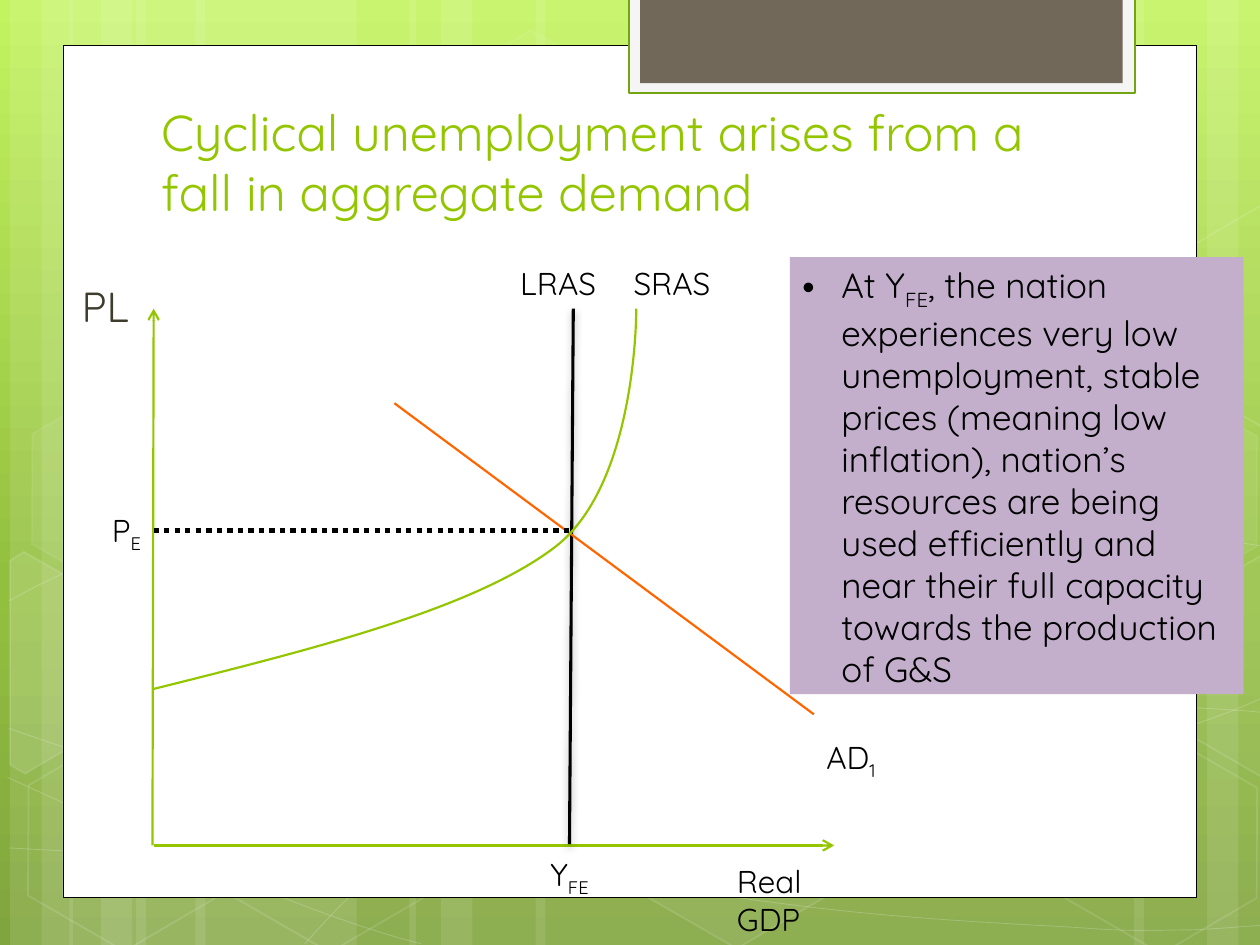
import copy
import pptx
import pptx.dml.color
import pptx.enum.dml
import pptx.enum.shapes
import pptx.enum.text
import pptx.oxml
import pptx.oxml.ns
import pptx.util
from lxml import etree

Inches = pptx.util.Inches
Pt = pptx.util.Pt
qn = pptx.oxml.ns.qn
RGB = pptx.dml.color.RGBColor.from_string
KIND = pptx.enum.shapes.MSO_SHAPE
FIT = pptx.enum.text.MSO_AUTO_SIZE
ANCHOR = pptx.enum.text.MSO_ANCHOR
WHITE, BLACK, GREEN = "FFFFFF", "000000", "94C600"

deck = pptx.Presentation()
deck.slide_width, deck.slide_height = Inches(10), Inches(7.5)
slide = deck.slides.add_slide(deck.slide_layouts[6])
shapes = slide.shapes


def paint(shape, fill=None, line=None, width=1, fade=100, glow=100):
    shape.shadow.inherit = False
    for part, tone, alpha, tag in ((shape.fill, fill, fade, "a:solidFill"),
                                   (shape.line.fill, line, glow, "a:ln")):
        if tone is None:
            part.background()
            continue
        part.solid()
        part.fore_color.rgb = RGB(tone)
        if alpha < 100:
            node = next(shape.element.spPr.find(qn(tag)).iter(qn("a:srgbClr")))
            etree.SubElement(node, qn("a:alpha")).set("val", str(alpha * 1000))
    if line:
        shape.line.width = Pt(width)


def trace(points, curved):
    track = [(Inches(x), Inches(y)) for x, y in points]
    pen = shapes.build_freeform(*track[0])
    pen.add_line_segments(track[1:], close=not curved)
    shape = pen.convert_to_shape()
    if curved:
        route = next(shape.element.iter(qn("a:path")))
        steps = route.findall(qn("a:lnTo"))
        for i in range(0, len(steps), 3):
            bend = etree.SubElement(route, qn("a:cubicBezTo"))
            for step in steps[i:i + 3]:
                bend.append(step[0])
                route.remove(step)
    return shape


back = slide.background.fill
back.gradient()
back.gradient_angle = 270
stops = slide.element.find(".//" + qn("a:gsLst"))
stops.append(copy.deepcopy(stops[0]))
for stop, (place, tone) in zip(back.gradient_stops, ((0, "C3F35F"), (0.62, "93BF3F"), (1, "81A53E"))):
    stop.position = place
    stop.color.rgb = RGB(tone)

for left, width in ((1.08, 1.75), (0.08, 0.5), (0.33, 0.83), (1.55, 1.75), (0.55, 0.5), (0.8, 0.83),
                    (7.33, 1.75), (9.58, 0.5), (9, 0.83), (4.25, 3.08), (3.25, 0.5), (3.5, 0.83)):
    band = shapes.add_shape(KIND.RECTANGLE, Inches(left), 0, Inches(width), Inches(7.5))
    paint(band, WHITE, fade=10)

waves = [
    [(0.07, 6.73), (0.61, 6.76), (1.15, 6.79), (1.9, 6.78), (2.65, 6.77), (3.58, 6.75), (4.58, 6.65),
     (5.58, 6.55), (7, 6.36), (7.92, 6.17), (8.83, 5.98), (9.77, 5.68), (10.07, 5.51)],
    [(0.07, 4.77), (0.36, 4.61), (0.65, 4.46), (1.21, 4.31), (1.78, 4.16), (2.59, 3.94), (3.47, 3.87),
     (4.36, 3.8), (5.44, 3.79), (6.54, 3.87), (7.64, 3.95), (9.47, 4.26), (10.07, 4.34)],
    [(0.06, 6.17), (1.27, 6.72), (2.47, 7.27), (3.34, 7.49)],
    [(0.07, 5.78), (0.38, 5.89), (0.7, 6), (1.28, 6.16), (1.86, 6.31), (2.73, 6.56), (3.57, 6.73),
     (4.4, 6.9), (5.45, 7.08), (6.28, 7.18), (7.11, 7.29), (8, 7.33), (8.53, 7.36),
     (9.05, 7.4), (9.19, 7.38), (9.45, 7.38), (9.71, 7.37), (9.89, 7.35), (10.07, 7.34)],
    [(2.42, 7.49), (2.6, 7.29), (2.78, 7.09), (3.02, 6.91), (3.26, 6.73), (3.6, 6.53), (3.88, 6.39),
     (4.16, 6.25), (4.33, 6.19), (4.7, 6.09), (5.06, 5.99), (5.73, 5.85), (6.08, 5.78),
     (6.44, 5.71), (6.49, 5.71), (6.8, 5.69), (7.11, 5.66), (7.6, 5.63), (7.94, 5.62),
     (8.29, 5.61), (8.86, 5.62), (8.86, 5.62), (8.86, 5.62), (9.53, 5.62), (9.53, 5.62),
     (9.71, 5.63), (9.88, 5.64), (9.97, 5.65), (10.06, 5.66), (10.03, 5.65), (10.06, 5.66)],
]
for wave in waves:
    paint(trace(wave, True), line=WHITE, width=0.5, glow=20)

for left, top, fade, glow in ((3.34, 0.36, 4, 8), (4.97, 5.89, 6, 12), (0.11, 5.91, 0, 12),
                              (0.14, 3.12, 7, 8), (1.74, 5.92, 0, 12), (7.53, 4.53, 10, 12),
                              (8.34, 5.93, 0, 12), (8.34, 3.14, 7, 8)):
    cell = shapes.add_shape(KIND.HEXAGON, Inches(left), Inches(top), Inches(1.75), Inches(1.52))
    cell.adjustments[0], cell.adjustments[1] = 0.285, 1.155
    cell.rotation = 30
    paint(cell, WHITE if fade else None, WHITE, fade=fade, glow=glow)

for points, fade in (
    ([(0.08, 4.45), (0.19, 4.38), (0.96, 4.82), (0.95, 5.7), (0.2, 6.14), (0.08, 6.07)], 10),
    ([(9.26, 4.85), (10.01, 4.41), (10.09, 4.46), (10.09, 6.13), (10.02, 6.17), (9.26, 5.73)], 4),
    ([(9.26, 2.07), (10.01, 1.63), (10.1, 1.68), (10.09, 3.35), (10.02, 3.39), (9.26, 2.95)], 0),
):
    paint(trace(points, False), WHITE if fade else None, WHITE, fade=fade, glow=12)

for box, fill, line, width in (((0.5, 0.36, 9, 6.76), WHITE, BLACK, 0.5),
                               ((4.99, -0.02, 4.02, 0.76), "F5F5F5", "74A510", 1.25),
                               ((5.08, -0.02, 3.83, 0.68), "71685A", None, 0)):
    paint(shapes.add_shape(KIND.RECTANGLE, *map(Inches, box)), fill, line, width)

for ends, tone, width, style in (((1.21, 6.71, 1.22, 2.45), GREEN, 1.25, "arrow"),
                                 ((1.22, 6.71, 6.62, 6.71), GREEN, 1.25, "arrow"),
                                 ((4.52, 6.7, 4.55, 2.45), BLACK, 1.75, "shadow"),
                                 ((3.13, 3.2, 6.46, 5.67), "FF6600", 1.25, ""),
                                 ((1.22, 4.21, 4.55, 4.21), BLACK, 3, "dots")):
    rule = shapes.add_connector(pptx.enum.shapes.MSO_CONNECTOR.STRAIGHT, *map(Inches, ends))
    rule.line.color.rgb = RGB(tone)
    rule.line.width = Pt(width)
    props = rule.element.spPr
    if style == "dots":
        rule.line.dash_style = pptx.enum.dml.MSO_LINE.ROUND_DOT
    if style == "arrow":
        etree.SubElement(props.find(qn("a:ln")), qn("a:tailEnd")).set("type", "arrow")
    effect = etree.SubElement(props, qn("a:effectLst"))
    if style == "shadow":
        shade = etree.SubElement(effect, qn("a:outerShdw"), blurRad=str(Pt(4)), dist=str(Pt(2)),
                                 dir="5400000", rotWithShape="0")
        tint = etree.SubElement(shade, qn("a:srgbClr"), val=BLACK)
        etree.SubElement(tint, qn("a:alpha"), val="28000")

supply = [(1.21, 5.47), (2.49, 5.15), (3.78, 4.83), (4.42, 4.33), (5.06, 3.82), (5.05, 2.45), (5.05, 2.45)]
paint(trace(supply, True), line=GREEN, width=1.25)

note = (", the nation experiences very low unemployment, stable prices (meaning low inflation), "
        "nation’s resources are being used efficiently and near their full capacity "
        "towards the production of G&S")
title = "Cyclical unemployment arises from a fall in aggregate demand"
for role, spot, size, tone, runs in (
    ("title", (1.18, 0.83, 7.68, 0.98), 28.8, GREEN, [title]),
    ("body", (0.55, 2.18, 5.7, 4.53), 24, "3E3D2D", ["PL"]),
    ("wrap", (5.75, 6.79, 0.99, 0.71), 18, BLACK, ["Real GDP"]),
    ("label", (4.27, 6.74, 0.56, 0.4), 18, BLACK, ["Y", "FE"]),
    ("label", (0.79, 4.01, 0.45, 0.4), 18, BLACK, ["P", "E"]),
    ("label", (6.46, 5.81, 0.65, 0.4), 18, BLACK, ["AD", "1"]),
    ("wrap", (4.93, 2.05, 0.82, 0.4), 18, BLACK, ["SRAS"]),
    ("wrap", (4.03, 2.05, 0.82, 0.4), 18, BLACK, ["LRAS"]),
    ("note", (6.27, 2.04, 3.6, 3.47), 20, BLACK, ["At Y", "FE", note]),
):
    place = map(Inches, spot)
    box = shapes.add_shape(KIND.RECTANGLE, *place) if role == "note" else shapes.add_textbox(*place)
    frame = box.text_frame
    frame.word_wrap = role != "label"
    frame.auto_size = FIT.NONE if role in ("title", "body") else FIT.SHAPE_TO_FIT_TEXT
    frame.vertical_anchor = ANCHOR.BOTTOM if role == "title" else ANCHOR.TOP
    para = frame.paragraphs[0]
    para.alignment = pptx.enum.text.PP_ALIGN.LEFT
    if role == "body":
        para.space_before = Pt(5.4)
    if role == "note":
        paint(box, "C3AFCC")
        props = para._p.get_or_add_pPr()
        props.set("marL", str(Inches(0.31)))
        props.set("indent", str(Inches(-0.31)))
        etree.SubElement(props, qn("a:buFont"), typeface="Arial")
        etree.SubElement(props, qn("a:buChar"), char="•")
    for i, words in enumerate(runs):
        run = para.add_run()
        run.text = words
        run.font.name = "Quicksand"
        run.font.size = Pt(size)
        run.font.color.rgb = RGB(tone)
        if i == 1:
            run._r.get_or_add_rPr().set("baseline", "-25000")

deck.save("out.pptx")
